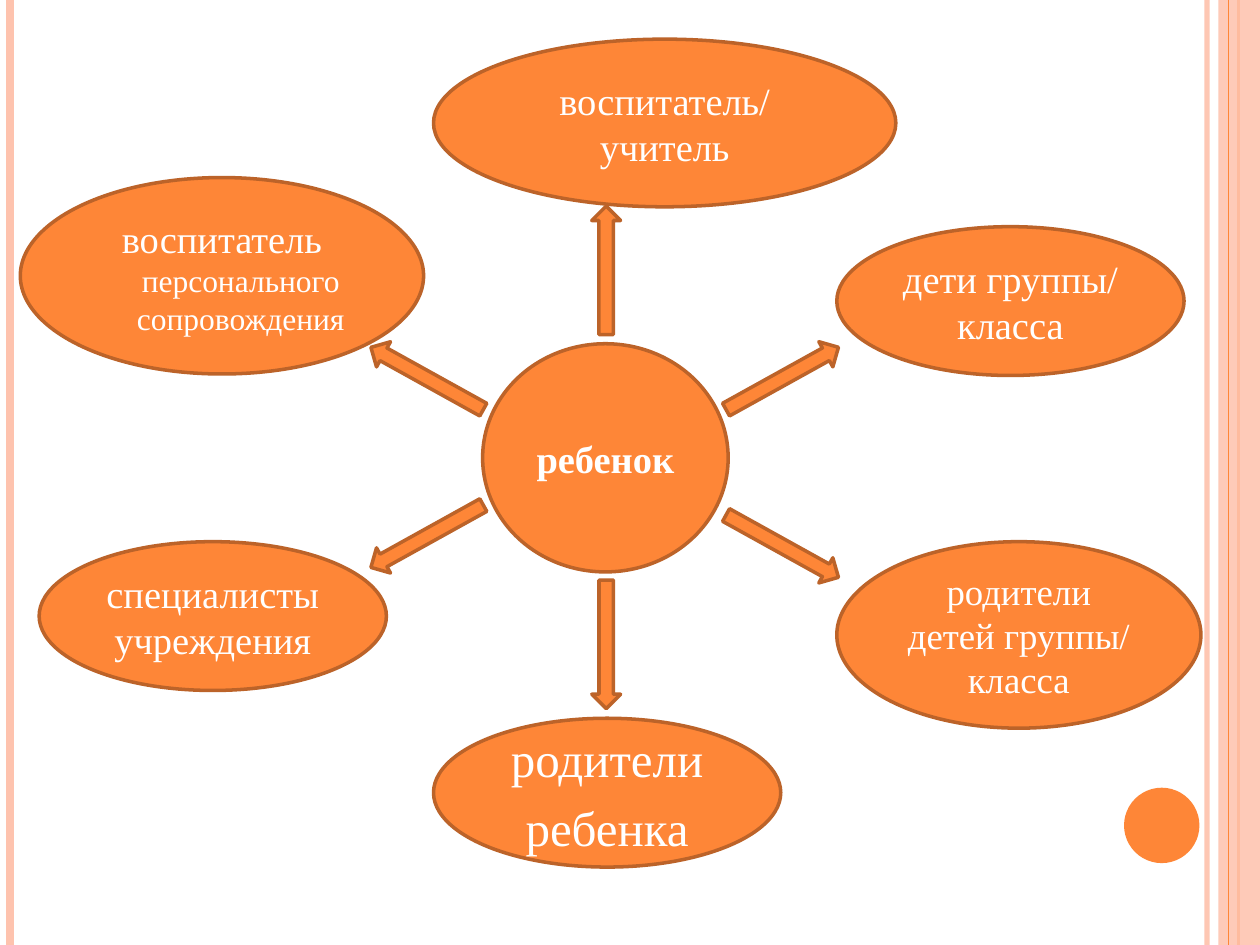
import pptx
import pptx.util
import pptx.dml.color
import pptx.enum.shapes
import pptx.enum.text
import pptx.oxml.ns
import lxml.etree

Cm = pptx.util.Cm
Pt = pptx.util.Pt
SHAPES = pptx.enum.shapes.MSO_SHAPE

THEME = {
    "font": "Times New Roman",
    "orange": "FE8637",
    "outline": "BC6329",
    "peach": "FEC3AE",
    "text": "FFFFFF",
    "outline_width": 2,
    "small": 18,
    "medium": 21,
    "normal": 22,
    "large": 28,
}
SLIDE_WIDTH, SLIDE_HEIGHT = 25.4, 19.05
ARROW_LENGTH, ARROW_THICKNESS = 2.59, 0.58
HANGING_INDENT = 0.76

# x, colour, width in points, opacity in percent
LINES_BEHIND_BAND = [
    (24.33, "peach", 3, 93),
    (0.2, "peach", 4.5, 100),
    (24.97, "orange", 1.5, 100),
]
LINES_OVER_BAND = [(24.77, "orange", 0.75, 100)]
BAND = (24.56, 0, 0.84, SLIDE_HEIGHT)
CORNER_CIRCLE = (22.66, 15.88, 1.52, 1.52)

# Each paragraph is a list of (text, size) runs.
PARTICIPANTS = [
    {"box": (0.41, 3.58, 8.13, 3.96), "hanging": True,
     "paragraphs": [[("воспитатель ", "normal"), ("персонального сопровождения", "small")]]},
    {"box": (8.74, 0.79, 9.32, 3.38),
     "paragraphs": [[("воспитатель/", "normal")], [("учитель", "normal")]]},
    {"box": (16.87, 4.57, 7, 3),
     "paragraphs": [[("дети группы/", "normal")], [("класса", "normal")]]},
    {"box": (16.87, 10.92, 7.34, 3.76),
     "paragraphs": [[("родители детей группы/", "medium")], [("класса", "medium")]]},
    {"box": (8.74, 14.48, 7, 3), "hanging": True, "space_before": 6,
     "paragraphs": [[("родители", "large")], [("ребенка", "large")]]},
    {"box": (0.79, 10.92, 7, 3),
     "paragraphs": [[("специалисты учреждения", "normal")]]},
    {"box": (9.73, 6.93, 4.95, 4.6), "bold": True,
     "paragraphs": [[("ребенок", "normal")]]},
]

# centre x, centre y, clockwise rotation of a right-pointing arrow
ARROWS = [
    (12.22, 5.45, 270),
    (12.22, 12.99, 90),
    (15.77, 7.63, 331),
    (8.61, 7.63, 209),
    (15.77, 11.01, 29),
    (8.61, 10.81, 151),
]


def color(name):
    return pptx.dml.color.RGBColor.from_string(THEME[name])


def set_opacity(properties, percent):
    """Make the solid colour inside a properties element partly transparent."""
    for element in properties.iter(pptx.oxml.ns.qn("a:srgbClr")):
        alpha = lxml.etree.SubElement(element, pptx.oxml.ns.qn("a:alpha"))
        alpha.set("val", str(percent * 1000))


def add_vertical_line(slide, x, color_name, width, opacity):
    line = slide.shapes.add_connector(
        pptx.enum.shapes.MSO_CONNECTOR.STRAIGHT, Cm(x), 0, Cm(x), Cm(SLIDE_HEIGHT))
    line.line.color.rgb = color(color_name)
    line.line.width = Pt(width)
    properties = line._element.spPr
    if opacity < 100:
        set_opacity(properties, opacity)
    lxml.etree.SubElement(properties, pptx.oxml.ns.qn("a:effectLst"))


def add_filled_shape(slide, kind, box, fill="orange", outlined=True):
    shape = slide.shapes.add_shape(kind, *map(Cm, box))
    shape.shadow.inherit = False
    shape.fill.solid()
    shape.fill.fore_color.rgb = color(fill)
    if outlined:
        shape.line.color.rgb = color("outline")
        shape.line.width = Pt(THEME["outline_width"])
    else:
        shape.line.fill.background()
    return shape


def add_participant(slide, box, paragraphs, hanging=False, space_before=0, bold=False):
    shape = add_filled_shape(slide, SHAPES.OVAL, box)
    frame = shape.text_frame
    frame.word_wrap = True
    frame.vertical_anchor = pptx.enum.text.MSO_ANCHOR.MIDDLE
    frame.text = "\n".join("" for _ in paragraphs)
    for paragraph, runs in zip(frame.paragraphs, paragraphs):
        paragraph.alignment = pptx.enum.text.PP_ALIGN.CENTER
        paragraph.space_before = Pt(space_before)
        if hanging:
            properties = paragraph._p.get_or_add_pPr()
            properties.set("marL", str(Cm(HANGING_INDENT)))
            properties.set("indent", str(-Cm(HANGING_INDENT)))
        for text, size in runs:
            run = paragraph.add_run()
            run.text = text
            run.font.name = THEME["font"]
            run.font.size = Pt(THEME[size])
            run.font.bold = bold
            run.font.color.rgb = color("text")


def add_arrow(slide, center_x, center_y, rotation):
    box = (center_x - ARROW_LENGTH / 2, center_y - ARROW_THICKNESS / 2,
           ARROW_LENGTH, ARROW_THICKNESS)
    add_filled_shape(slide, SHAPES.RIGHT_ARROW, box).rotation = rotation


def main():
    presentation = pptx.Presentation()
    presentation.slide_width = Cm(SLIDE_WIDTH)
    presentation.slide_height = Cm(SLIDE_HEIGHT)
    slide = presentation.slides.add_slide(presentation.slide_layouts[6])

    for line in LINES_BEHIND_BAND:
        add_vertical_line(slide, *line)
    band = add_filled_shape(slide, SHAPES.RECTANGLE, BAND, "peach", outlined=False)
    set_opacity(band._element.spPr, 87)
    for line in LINES_OVER_BAND:
        add_vertical_line(slide, *line)
    add_filled_shape(slide, SHAPES.OVAL, CORNER_CIRCLE, outlined=False)

    for participant in PARTICIPANTS:
        add_participant(slide, **participant)
    for arrow in ARROWS:
        add_arrow(slide, *arrow)
    presentation.save("out.pptx")


if __name__ == "__main__":
    main()
